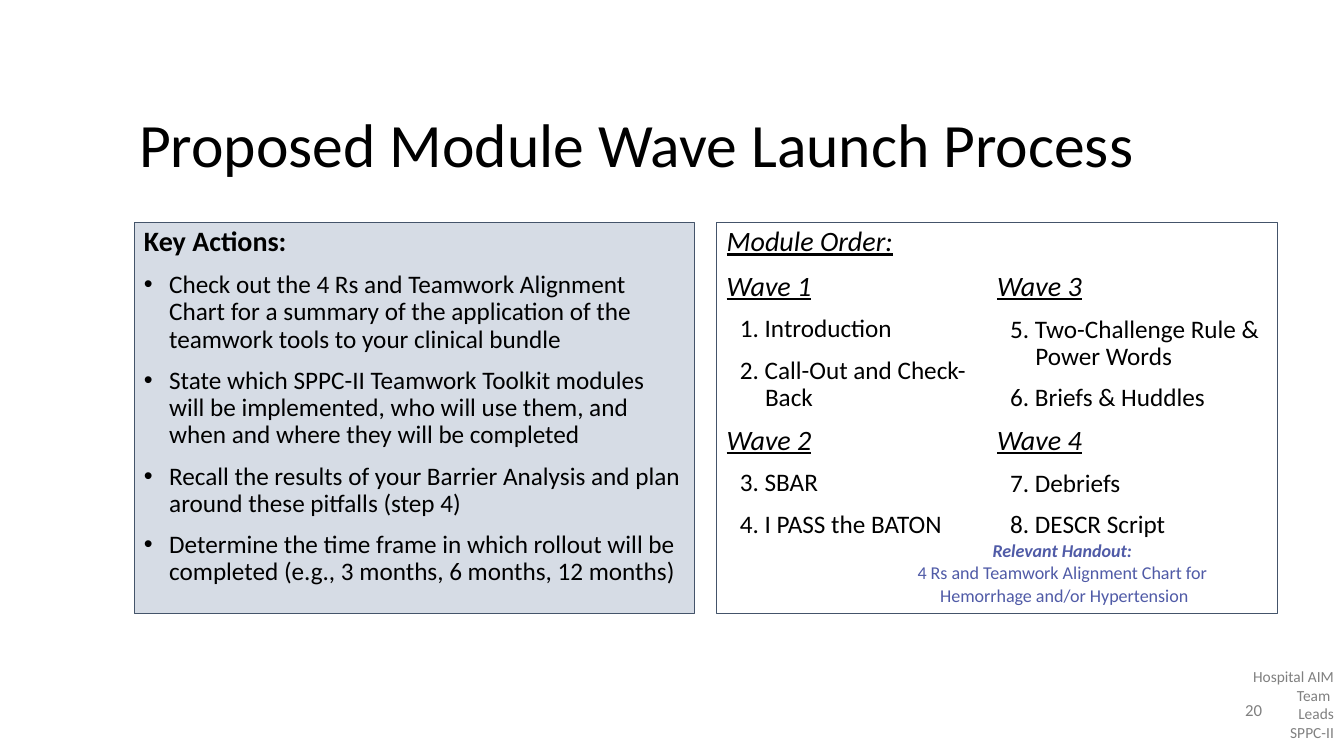
from dataclasses import dataclass

from lxml.etree import SubElement
from pptx import Presentation
from pptx.dml.color import RGBColor
from pptx.enum.shapes import MSO_SHAPE as Shape
from pptx.enum.text import MSO_ANCHOR as Anchor, MSO_AUTO_SIZE as AutoSize, PP_ALIGN as Align
from pptx.oxml.ns import qn
from pptx.util import Inches, Pt


@dataclass(frozen=True)
class Theme:
    font: str = "Calibri"
    ink: str = "000000"
    grey: str = "808080"
    accent: str = "505BA7"
    border: str = "44546A"
    panel: str = "D6DCE5"
    title: float = 44
    heading: float = 20
    body: float = 18
    handout: float = 12.9
    number: float = 12
    footer: float = 11


THEME = Theme()
PANEL_TOP, PANEL_WIDTH, PANEL_HEIGHT = 2.21, 5.56, 3.88
ACTIONS_LEFT, ORDER_LEFT = 1.33, 7.11
INSET = 0.1
COLUMN_WIDTH = (PANEL_WIDTH - 2 * INSET) / 2
HEADING_STEP = 0.44

ACTIONS = [
    "Check out the 4 Rs and Teamwork Alignment Chart for a summary of the "
    "application of the teamwork tools to your clinical bundle",
    "State which SPPC-II Teamwork Toolkit modules will be implemented, "
    "who will use them, and when and where they will be completed",
    "Recall the results of your Barrier Analysis and plan around these pitfalls (step 4)",
    "Determine the time frame in which rollout will be completed "
    "(e.g., 3 months, 6 months, 12 months)",
]
LEFT_WAVES = {
    "Wave 1": ["1. Introduction", "2. Call-Out and Check-Back"],
    "Wave 2": ["3. SBAR", "4. I PASS the BATON"],
}
RIGHT_WAVES = {
    "Wave 3": ["5. Two-Challenge Rule & Power Words", "6. Briefs & Huddles"],
    "Wave 4": ["7. Debriefs", "8. DESCR Script"],
}


def prepare_frame(shape, anchor=Anchor.TOP):
    frame = shape.text_frame
    frame.word_wrap = True
    frame.auto_size = AutoSize.NONE
    frame.vertical_anchor = anchor
    return frame


def add_box(page, left, top, width, height, anchor=Anchor.TOP):
    box = page.shapes.add_textbox(Inches(left), Inches(top), Inches(width), Inches(height))
    return prepare_frame(box, anchor)


def add_panel(page, left, fill=None):
    panel = page.shapes.add_shape(Shape.RECTANGLE, Inches(left), Inches(PANEL_TOP),
                                  Inches(PANEL_WIDTH), Inches(PANEL_HEIGHT))
    panel.shadow.inherit = False
    if fill:
        panel.fill.solid()
        panel.fill.fore_color.rgb = RGBColor.from_string(fill)
    else:
        panel.fill.background()
    panel.line.color.rgb = RGBColor.from_string(THEME.border)
    panel.line.width = Pt(0.75)
    return prepare_frame(panel)


def add_para(frame, text, size, color=THEME.ink, align=Align.LEFT, spacing=0.9, before=10,
             indent=None, bullet=None, bold=False, italic=False, underline=False):
    first = not frame.paragraphs[0].runs
    para = frame.paragraphs[0] if first else frame.add_paragraph()
    para.alignment = align
    para.line_spacing = spacing
    para.space_before = Pt(0 if first else before)
    if indent:
        properties = para._p.get_or_add_pPr()
        properties.set("marL", str(Inches(indent)))
        properties.set("indent", str(Inches(-0.25)))
    if bullet:
        SubElement(properties, qn("a:buFont")).set("typeface", "Arial")
        SubElement(properties, qn("a:buChar")).set("char", bullet)
    span = para.add_run()
    span.text = text
    font = span.font
    font.name, font.size = THEME.font, Pt(size)
    font.bold, font.italic, font.underline = bold, italic, underline
    font.color.rgb = RGBColor.from_string(color)


def add_order_heading(frame, text):
    add_para(frame, text, THEME.heading, italic=True, underline=True)


def add_waves(frame, waves):
    for wave, modules in waves.items():
        add_order_heading(frame, wave)
        for module in modules:
            add_para(frame, module, THEME.body, indent=0.38)


def add_title(page, text):
    title = page.shapes.title
    title.left, title.top = Inches(1.28), Inches(0.96)
    title.width, title.height = Inches(11.28), Inches(1)
    add_para(prepare_frame(title, Anchor.MIDDLE), text, THEME.title)


def add_actions(page):
    frame = add_panel(page, ACTIONS_LEFT, THEME.panel)
    add_para(frame, "Key Actions:", THEME.heading, bold=True)
    for action in ACTIONS:
        add_para(frame, action, THEME.body, indent=0.25, bullet="•")


def add_module_order(page):
    # The panel holds the left column, a text box the right one
    frame = add_panel(page, ORDER_LEFT)
    frame.margin_right = Inches(INSET + COLUMN_WIDTH)
    add_order_heading(frame, "Module Order:")
    add_waves(frame, LEFT_WAVES)
    column = add_box(page, ORDER_LEFT + COLUMN_WIDTH, PANEL_TOP + HEADING_STEP,
                     COLUMN_WIDTH + 2 * INSET, 2.75)
    add_waves(column, RIGHT_WAVES)


def add_handout(page):
    frame = add_box(page, 7.78, 5.34, 5.55, 0.74)
    style = dict(size=THEME.handout, color=THEME.accent, align=Align.CENTER, spacing=0.8)
    add_para(frame, "Relevant Handout: ", bold=True, italic=True, **style)
    for line in ("4 Rs and Teamwork Alignment Chart for ", "Hemorrhage and/or Hypertension"):
        add_para(frame, line, before=4, **style)


def add_footer(page):
    frame = add_box(page, 12.17, 6.57, 1.16, 0.84)
    for line in ("Hospital AIM Team ", "Leads", "SPPC-II"):
        add_para(frame, line, THEME.footer, THEME.grey, Align.RIGHT, spacing=1, before=0)
    number = add_box(page, 12.2, 6.84, 0.47, 0.4, Anchor.MIDDLE)
    add_para(number, "20", THEME.number, THEME.grey, Align.CENTER, spacing=1)


def main():
    deck = Presentation()
    deck.slide_width, deck.slide_height = Inches(13.33), Inches(7.5)
    page = deck.slides.add_slide(deck.slide_layouts.get_by_name("Title Only"))
    add_title(page, "Proposed Module Wave Launch Process")
    add_actions(page)
    add_module_order(page)
    add_handout(page)
    add_footer(page)
    deck.save("out.pptx")


if __name__ == "__main__":
    main()
